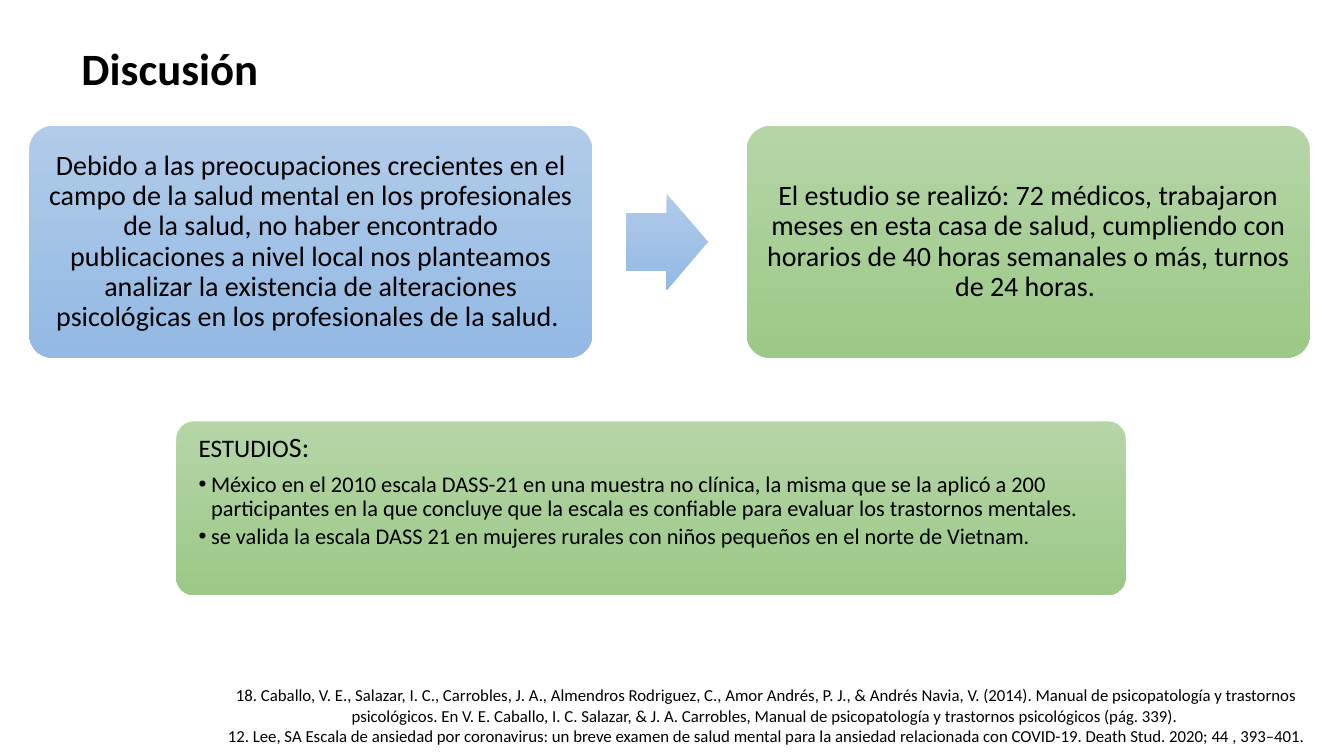
from dataclasses import dataclass
from lxml.etree import SubElement
from pptx import Presentation
from pptx.dml.color import RGBColor
from pptx.enum.shapes import MSO_SHAPE
from pptx.enum.text import MSO_ANCHOR, MSO_AUTO_SIZE, PP_ALIGN
from pptx.oxml.ns import qn
from pptx.util import Pt


@dataclass(frozen=True)
class Theme:
    face: str = "Calibri"
    ink: str = "000000"
    blue: tuple = ("B1CBE9", "93B9E4")
    green: tuple = ("B5D5A7", "9CC987")
    title: float = 32
    card: float = 20
    head: float = 18
    item: float = 16
    note: float = 12


THEME = Theme()

CAUSE = ("Debido a las preocupaciones crecientes en el campo de la salud mental "
         "en los profesionales de la salud, no haber encontrado publicaciones a "
         "nivel local nos planteamos analizar la existencia de alteraciones "
         "psicológicas en los profesionales de la salud. ")
STUDY = ("El estudio se realizó: 72 médicos, trabajaron meses en esta casa de "
         "salud, cumpliendo con horarios de 40 horas semanales o más, turnos de "
         "24 horas. ")
ITEMS = [
    "México en el 2010 escala DASS-21 en una muestra no clínica, la misma que se "
    "la aplicó a 200 participantes en la que concluye que la escala es confiable "
    "para evaluar los trastornos mentales.",
    "se valida la escala DASS 21 en mujeres rurales con niños pequeños en el "
    "norte de Vietnam.",
]
NOTES = [
    "18. Caballo, V. E., Salazar, I. C., Carrobles, J. A., Almendros Rodriguez, C., "
    "Amor Andrés, P. J., & Andrés Navia, V. (2014). Manual de psicopatología y "
    "trastornos psicológicos. En V. E. Caballo, I. C. Salazar, & J. A. Carrobles, "
    "Manual de psicopatología y trastornos psicológicos (pág. 339). ",
    "12. Lee, SA Escala de ansiedad por coronavirus: un breve examen de salud mental "
    "para la ansiedad relacionada con COVID-19. Death Stud. 2020; 44 , 393–401.",
]


def apply(obj, vals):
    for name, val in vals.items():
        setattr(obj, name, val)


def place(shape, box):
    apply(shape, dict(zip(("left", "top", "width", "height"), map(Pt, box))))


def frame(shape, anchor, side, edge):
    text = shape.text_frame
    apply(text, {"word_wrap": True, "auto_size": MSO_AUTO_SIZE.NONE,
                 "vertical_anchor": anchor,
                 "margin_left": Pt(side), "margin_right": Pt(side),
                 "margin_top": Pt(edge), "margin_bottom": Pt(edge)})
    return text


def write(para, text, size, bold=False):
    run = para.add_run()
    run.text = text
    apply(run.font, {"name": THEME.face, "size": Pt(size), "bold": bold})
    run.font.color.rgb = RGBColor.from_string(THEME.ink)


def mark(para, char, indent):
    props = para._p.get_or_add_pPr()
    props.set("marL", str(Pt(indent)))
    props.set("indent", str(-Pt(indent)))
    if char:
        SubElement(props, qn("a:buChar")).set("char", char)
    else:
        SubElement(props, qn("a:buNone"))


def block(slide, kind, box, tones, bends):
    shape = slide.shapes.add_shape(kind, *map(Pt, box))
    shape.shadow.inherit = False
    shape.line.fill.background()
    shape.fill.gradient()
    shape.fill.gradient_angle = 270
    for stop, tone in zip(shape.fill.gradient_stops, tones):
        stop.color.rgb = RGBColor.from_string(tone)
    for spot, bend in enumerate(bends):
        shape.adjustments[spot] = bend
    return shape


def header(slide, box):
    title = slide.shapes.title
    place(title, box)
    para = frame(title, MSO_ANCHOR.MIDDLE, 7.2, 3.6).paragraphs[0]
    apply(para, {"alignment": PP_ALIGN.LEFT, "line_spacing": 0.9})
    write(para, "Discusión", THEME.title, True)


def flow(slide, box):
    left, top, width, height = box
    wide = 402
    # Two cards, one at each end
    cards = ((left, CAUSE, THEME.blue), (left + width - wide, STUDY, THEME.green))
    for x, text, tones in cards:
        card = block(slide, MSO_SHAPE.ROUNDED_RECTANGLE, (x, top, wide, height),
                     tones, [0.1])
        para = frame(card, MSO_ANCHOR.MIDDLE, 6, 6).paragraphs[0]
        apply(para, {"alignment": PP_ALIGN.CENTER, "line_spacing": 0.9})
        write(para, text, THEME.card)
    # Arrow between them
    tall = 68.5
    block(slide, MSO_SHAPE.RIGHT_ARROW,
          (left + wide + 24, top + (height - tall) / 2, 58.5, tall),
          THEME.blue, [0.6, 0.5])


def studies(slide, box):
    left, top, width, height = box
    panel = block(slide, MSO_SHAPE.ROUNDED_RECTANGLE, box, THEME.green, [0.1])
    body = slide.placeholders[1]
    body.element.addprevious(panel.element)  # panel goes behind the list
    place(body, (left + 10.8, top + 3.6, width - 21.6, height - 7.2))
    text = frame(body, MSO_ANCHOR.TOP, 5, 5)
    # Heading
    para = text.paragraphs[0]
    mark(para, None, 0)
    apply(para, {"line_spacing": 0.9, "space_before": Pt(0), "space_after": Pt(7)})
    write(para, "ESTUDIO", THEME.head)
    write(para, "S:", THEME.card)
    # Bullets
    for item in ITEMS:
        para = text.add_paragraph()
        mark(para, "•", 9)
        apply(para, {"level": 1, "line_spacing": 0.9, "space_before": Pt(0),
                     "space_after": Pt(2.4)})
        write(para, item, THEME.item)


def sources(slide, box):
    shape = slide.shapes.add_textbox(*map(Pt, box))
    text = frame(shape, MSO_ANCHOR.MIDDLE, 7.2, 0)
    for spot, note in enumerate(NOTES):
        para = text.add_paragraph() if spot else text.paragraphs[0]
        para.alignment = PP_ALIGN.CENTER
        write(para, note, THEME.note)


def main():
    deck = Presentation()
    apply(deck, {"slide_width": Pt(960), "slide_height": Pt(540)})
    slide = deck.slides.add_slide(deck.slide_layouts[1])
    header(slide, (51, 17, 828, 68))
    flow(slide, (21, 90, 914.5, 165.5))
    studies(slide, (126, 301, 678, 124))
    sources(slide, (135.5, 489, 824.5, 44))
    deck.save("out.pptx")


if __name__ == "__main__":
    main()
